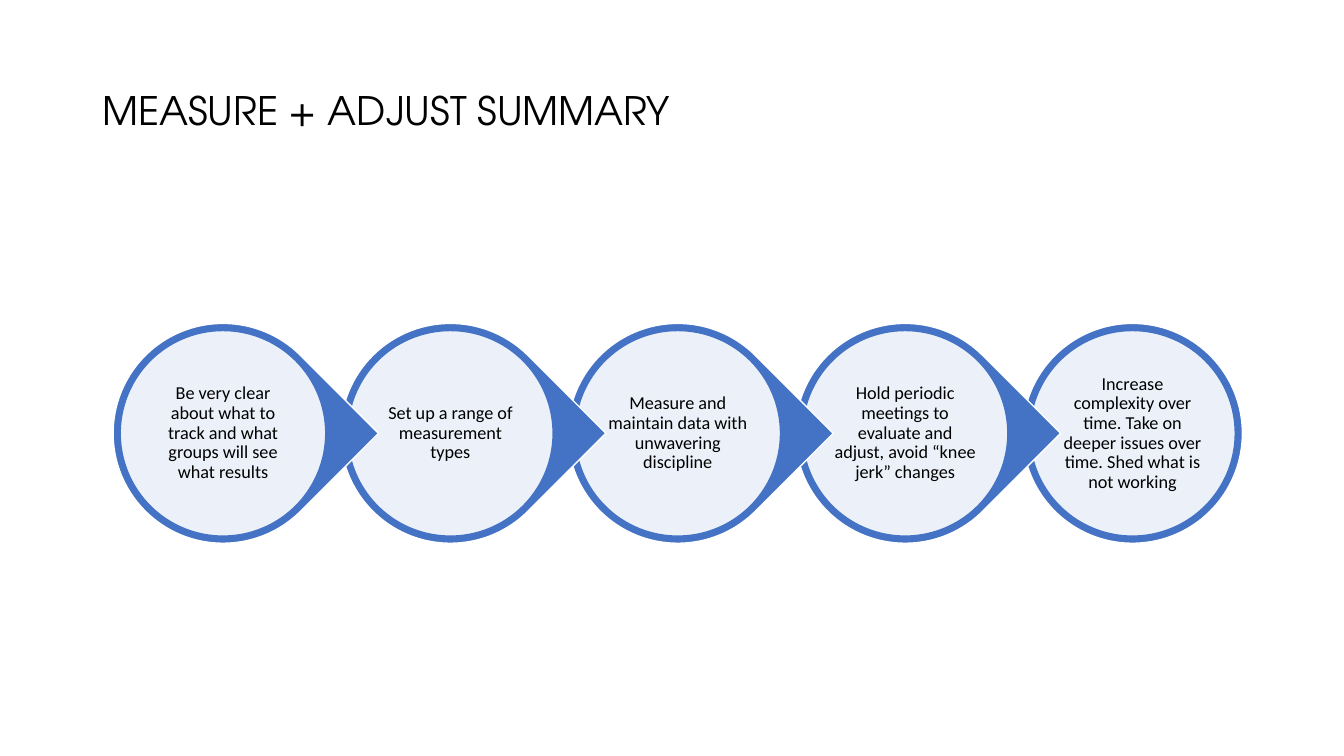
"""Build the Measure + Adjust summary slide: five steps in a chain of circles."""
from lxml.etree import SubElement
from pptx import Presentation
from pptx.dml.color import RGBColor
from pptx.enum.shapes import MSO_SHAPE
from pptx.enum.text import MSO_ANCHOR, PP_ALIGN
from pptx.oxml.ns import qn
from pptx.util import Cm, Pt

COLORS = {"blue": "4472C4", "white": "FFFFFF", "black": "000000"}
STEPS = [
    "Be very clear about what to track and what groups will see what results",
    "Set up a range of measurement types",
    "Measure and maintain data with unwavering discipline",
    "Hold periodic meetings to evaluate and adjust, avoid “knee jerk” changes",
    "Increase complexity over time. Take on deeper issues over time. Shed what is not working",
]
FIRST_X, MID_Y, PITCH = 5.62, 10.92, 5.73
OUTER, INNER, LABEL = 5.54, 5.18, 3.68


def add_text(text, left, top, width, height, font, size, align=PP_ALIGN.LEFT, inset=(0.25, 0.13)):
    tf = s.shapes.add_textbox(Cm(left), Cm(top), Cm(width), Cm(height)).text_frame
    tf.word_wrap = True
    tf.vertical_anchor = MSO_ANCHOR.MIDDLE
    tf.margin_left = tf.margin_right = Cm(inset[0])
    tf.margin_top = tf.margin_bottom = Cm(inset[1])
    p = tf.paragraphs[0]
    p.alignment = align
    p.line_spacing = 0.9
    r = p.add_run()
    r.text = text
    r.font.name = font
    r.font.size = Pt(size)
    r.font.color.rgb = RGBColor.from_string(COLORS["black"])


def add_disc(kind, x, size, fill, line):
    sp = s.shapes.add_shape(kind, Cm(x - size / 2), Cm(MID_Y - size / 2), Cm(size), Cm(size))
    sp.shadow.inherit = False
    sp.fill.solid()
    sp.fill.fore_color.rgb = RGBColor.from_string(COLORS[fill])
    sp.line.color.rgb = RGBColor.from_string(COLORS[line])
    sp.line.width = Pt(1)
    return sp


prs = Presentation()
prs.slide_width, prs.slide_height = Cm(33.87), Cm(19.05)
s = prs.slides.add_slide(prs.slide_layouts[6])

add_text("MEASURE + ADJUST SUMMARY", 2.33, 1.01, 29.21, 3.68, "TeX Gyre Adventor", 28)

for i, step in reversed(list(enumerate(STEPS))):
    x = FIRST_X + i * PITCH
    if i == len(STEPS) - 1:
        add_disc(MSO_SHAPE.OVAL, x, OUTER, "blue", "white")
    else:
        drop = add_disc(MSO_SHAPE.TEAR, x, OUTER, "blue", "white")
        drop.adjustments[0] = 1
        drop.rotation = 45
    disc = add_disc(MSO_SHAPE.OVAL, x, INNER, "white", "blue")
    color = disc.fill._xPr.find(qn("a:solidFill"))[0]
    SubElement(color, qn("a:alpha"), val="90000")
    add_text(step, x - LABEL / 2, MID_Y - LABEL / 2, LABEL, LABEL, "Calibri", 13,
             align=PP_ALIGN.CENTER, inset=(0.05, 0.05))

prs.save("out.pptx")
